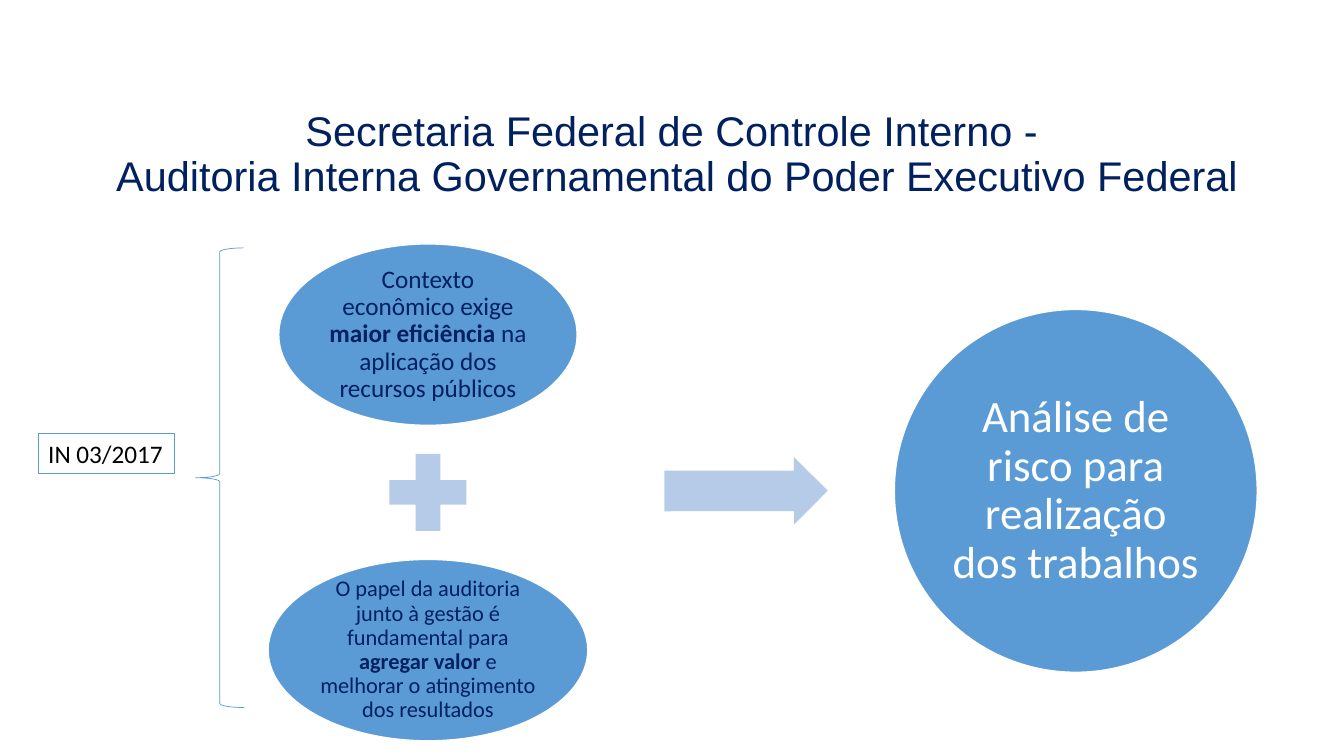
from dataclasses import dataclass

from pptx import Presentation
from pptx.dml.color import RGBColor
from pptx.enum.shapes import MSO_SHAPE
from pptx.enum.text import MSO_ANCHOR, MSO_AUTO_SIZE, PP_ALIGN
from pptx.util import Pt

EMU_PER_PX = 9144  # 100 px to the inch


@dataclass(frozen=True)
class Theme:
    navy: RGBColor = RGBColor(0x00, 0x20, 0x60)
    blue: RGBColor = RGBColor(0x5B, 0x9B, 0xD5)
    pale_blue: RGBColor = RGBColor(0xB5, 0xCB, 0xE7)
    white: RGBColor = RGBColor(0xFF, 0xFF, 0xFF)
    black: RGBColor = RGBColor(0x00, 0x00, 0x00)
    title_font: str = "Arial"
    body_font: str = "Calibri"
    title_size: float = 29.6
    result_size: int = 32
    body_size: int = 18
    small_size: int = 16


THEME = Theme()


def px(length):
    return round(length * EMU_PER_PX)


def set_font(paragraph, name, size, color):
    paragraph.font.name = name
    paragraph.font.size = Pt(size)
    paragraph.font.color.rgb = color


def add_shape(slide, kind, box, fill=None, line=None, line_width=1):
    shape = slide.shapes.add_shape(kind, *map(px, box))
    shape.shadow.inherit = False
    if fill is None:
        shape.fill.background()
    else:
        shape.fill.solid()
        shape.fill.fore_color.rgb = fill
    if line is None:
        shape.line.fill.background()
    else:
        shape.line.color.rgb = line
        shape.line.width = Pt(line_width)
    return shape


def add_title(slide, box, lines):
    title = slide.shapes.title
    title.left, title.top, title.width, title.height = map(px, box)
    frame = title.text_frame
    frame.text = "\n".join(lines)
    frame.auto_size = MSO_AUTO_SIZE.NONE
    frame.vertical_anchor = MSO_ANCHOR.MIDDLE
    for paragraph in frame.paragraphs:
        paragraph.alignment = PP_ALIGN.CENTER
        paragraph.line_spacing = 0.9
        set_font(paragraph, THEME.title_font, THEME.title_size, THEME.navy)


def add_ellipse(slide, box, runs, size, color, inset):
    """Runs are (text, bold) pairs."""
    ellipse = add_shape(slide, MSO_SHAPE.OVAL, box, THEME.blue, THEME.white)
    frame = ellipse.text_frame
    frame.word_wrap = True
    frame.vertical_anchor = MSO_ANCHOR.MIDDLE
    frame.margin_left = frame.margin_right = px(inset)
    frame.margin_top = frame.margin_bottom = px(inset)
    paragraph = frame.paragraphs[0]
    paragraph.alignment = PP_ALIGN.CENTER
    paragraph.line_spacing = 0.9
    set_font(paragraph, THEME.body_font, size, color)
    for text, bold in runs:
        run = paragraph.add_run()
        run.text = text
        run.font.bold = bold


def add_norm(slide, box):
    """Norm label on the left and the brace that opens to its right."""
    left, top, width, height = box
    add_shape(slide, MSO_SHAPE.LEFT_BRACE, (left + width - 48, top, 48, height),
              line=THEME.blue, line_width=0.5)
    label = add_shape(slide, MSO_SHAPE.RECTANGLE, (left, top + 184, 135, 40),
                      THEME.white, THEME.blue)
    frame = label.text_frame
    frame.word_wrap = False
    frame.vertical_anchor = MSO_ANCHOR.TOP
    frame.text = "IN 03/2017"
    paragraph = frame.paragraphs[0]
    paragraph.alignment = PP_ALIGN.LEFT
    set_font(paragraph, THEME.body_font, THEME.body_size, THEME.black)


def add_reasons(slide, box):
    """Two ellipses at the ends of the box, joined by a plus sign."""
    left, top, width, height = box
    center = left + width / 2
    ellipse_height, plus = 180, 104
    context_width = 296
    add_ellipse(slide, (center - context_width / 2, top, context_width, ellipse_height),
                [("Contexto econômico exige ", False),
                 ("maior eficiência ", True),
                 ("na aplicação dos recursos públicos", False)],
                THEME.body_size, THEME.navy, 3)
    add_shape(slide, MSO_SHAPE.MATH_PLUS,
              (center - plus / 2, top + (height - plus) / 2, plus, plus),
              THEME.pale_blue)
    add_ellipse(slide, (left, top + height - ellipse_height, width, ellipse_height),
                [("O papel da auditoria junto à gestão é fundamental para ", False),
                 ("agregar valor", True),
                 (" e melhorar o atingimento dos resultados", False)],
                THEME.small_size, THEME.navy, 2)


def add_result(slide, box):
    """Arrow leading to the large circle at the right end of the box."""
    left, top, width, height = box
    arrow_height = 67
    arrow = add_shape(slide, MSO_SHAPE.RIGHT_ARROW,
                      (left, top + (height - arrow_height) / 2, 162, arrow_height),
                      THEME.pale_blue)
    arrow.adjustments[0] = 0.6
    arrow.adjustments[1] = 0.5
    arrow.rotation = 359.9
    add_ellipse(slide, (left + width - height, top, height, height),
                [("Análise de risco para realização dos trabalhos", False)],
                THEME.result_size, THEME.white, 4)


def main():
    presentation = Presentation()
    presentation.slide_width = px(1333)
    presentation.slide_height = px(750)
    slide = presentation.slides.add_slide(presentation.slide_layouts[5])
    add_title(slide, (77, 87, 1191, 135),
              ["Secretaria Federal de Controle Interno - ",
               "Auditoria Interna Governamental do Poder Executivo Federal"])
    add_reasons(slide, (266, 242, 317, 493))
    add_result(slide, (659, 307, 588, 360))
    add_norm(slide, (38, 246, 204, 456))
    presentation.save("out.pptx")


if __name__ == "__main__":
    main()
